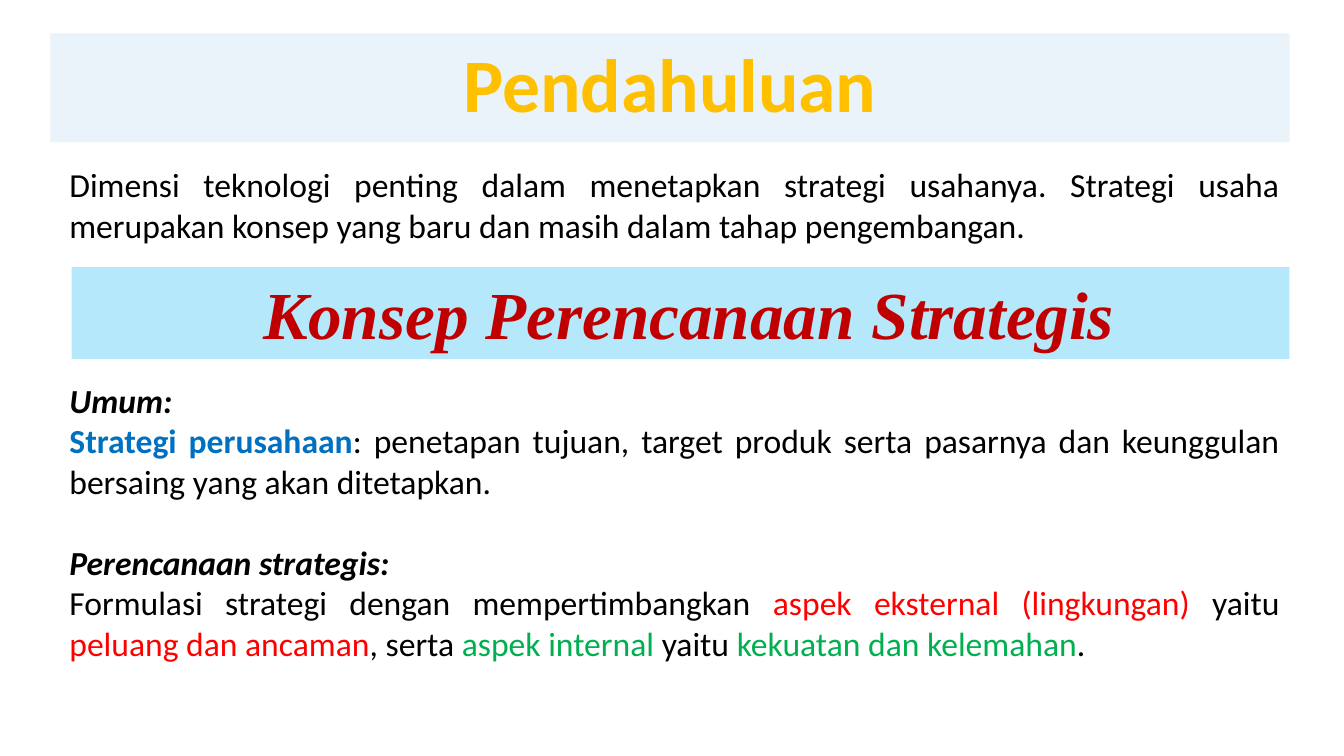
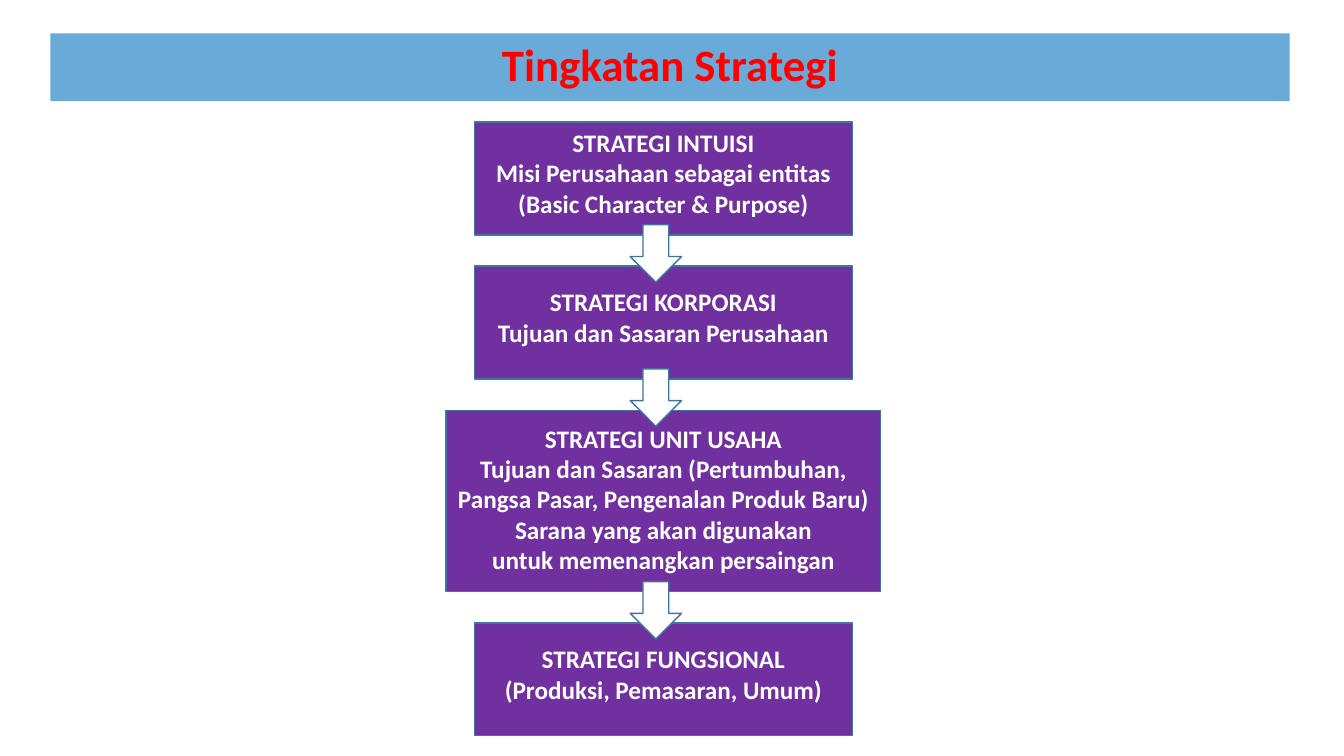
import pptx
import pptx.util
import pptx.dml.color
import pptx.enum.shapes
import pptx.enum.text
import pptx.oxml.ns
import lxml.etree

Inches = pptx.util.Inches
Pt = pptx.util.Pt
SHAPE = pptx.enum.shapes.MSO_SHAPE
ALIGN = pptx.enum.text.PP_ALIGN
MIDDLE = pptx.enum.text.MSO_ANCHOR.MIDDLE

COLORS = {
    "black": "000000", "white": "FFFFFF", "pale": "DEEBF7", "gold": "FFC000",
    "sky": "00B0F0", "blue": "0070C0", "maroon": "C00000", "red": "FF0000",
    "green": "00B050", "purple": "7030A0", "edge": "43739E",
}
LEFT, TOP, WIDTH = 0.5, 0.33, 12.29  # title band
TEXT_LEFT, TEXT_WIDTH = 0.59, 12.2


def color(name):
    return pptx.dml.color.RGBColor.from_string(COLORS[name])


def paint(shape, name, alpha=None):
    """Fill a shape, with an optional opacity in percent."""
    shape.fill.solid()
    shape.fill.fore_color.rgb = color(name)
    if alpha is not None:
        qn = pptx.oxml.ns.qn
        tone = shape.fill._xPr.find(qn("a:solidFill"))[0]
        lxml.etree.SubElement(tone, qn("a:alpha")).set("val", str(alpha * 1000))


def write(para, text, size=24, font="Calibri", tint="black",
          bold=False, italic=False):
    """Add one formatted run to a paragraph."""
    run = para.add_run()
    run.text = text
    run.font.size = Pt(size)
    run.font.name = font
    run.font.color.rgb = color(tint)
    run.font.bold = bold
    run.font.italic = italic


def fill_text(frame, paras, align=ALIGN.CENTER, **style):
    """Write paragraphs; each is a string or a list of (text, style) runs."""
    for i, runs in enumerate(paras):
        para = frame.add_paragraph() if i else frame.paragraphs[0]
        para.alignment = align
        if isinstance(runs, str):
            runs = [(runs, {})]
        for text, extra in runs:
            write(para, text, **{**style, **extra})


def add_title(slide, text, height, band, size, tint):
    title = slide.shapes.title
    title.left, title.top = Inches(LEFT), Inches(TOP)
    title.width, title.height = Inches(WIDTH), Inches(height)
    paint(title, band, 59)
    frame = title.text_frame
    frame.auto_size = pptx.enum.text.MSO_AUTO_SIZE.NONE
    frame.vertical_anchor = MIDDLE
    fill_text(frame, [text], size=size, tint=tint, bold=True)
    frame.paragraphs[0].line_spacing = 0.9


def add_body(slide, top, height, paras):
    box = slide.shapes.add_textbox(Inches(TEXT_LEFT), Inches(top),
                                   Inches(TEXT_WIDTH), Inches(height))
    box.text_frame.word_wrap = True
    fill_text(box.text_frame, paras, align=ALIGN.JUSTIFY)
    return box.text_frame


def add_block(slide, kind, left, top, width, height, fill, alpha=None, edge=None):
    block = slide.shapes.add_shape(kind, Inches(left), Inches(top),
                                   Inches(width), Inches(height))
    block.shadow.inherit = False
    paint(block, fill, alpha)
    if edge:
        block.line.color.rgb = color(edge)
        block.line.width = Pt(1)
    else:
        block.line.fill.background()
    block.text_frame.vertical_anchor = MIDDLE
    return block


def build_intro(slide):
    add_title(slide, "Pendahuluan", 1.08, "pale", 54, "gold")
    add_body(slide, 1.58, 0.91, [
        "Dimensi teknologi penting dalam menetapkan strategi usahanya. "
        "Strategi usaha merupakan konsep yang baru dan masih dalam tahap "
        "pengembangan."])

    # Section band
    band = add_block(slide, SHAPE.RECTANGLE, 0.71, 2.65, 12.08, 0.91, "sky", 29)
    band.text_frame.margin_left = Inches(0.27)
    fill_text(band.text_frame, ["Konsep Perencanaan Strategis"], size=48,
              font="Times New Roman", tint="maroon", bold=True, italic=True)

    # Definitions
    head = {"bold": True, "italic": True}
    red, green = {"tint": "red"}, {"tint": "green"}
    frame = add_body(slide, 3.72, 2.93, [
        [("Umum:", head)],
        [("Strategi perusahaan", {"tint": "blue", "bold": True}),
         (": penetapan tujuan, target produk serta pasarnya dan keunggulan "
          "bersaing yang akan ditetapkan.", {})],
        [("Perencanaan strategis:", head)],
        [("Formulasi strategi dengan mempertimbangkan ", {}),
         ("aspek eksternal (lingkungan)", red), (" yaitu ", {}),
         ("peluang dan ancaman", red), (", serta ", {}),
         ("aspek internal ", green), ("yaitu ", {}),
         ("kekuatan dan kelemahan", green), (".", {})],
    ])
    frame.paragraphs[2].space_before = Pt(29.3)


def build_levels(slide):
    add_title(slide, "Tingkatan Strategi", 0.67, "blue", 32, "red")

    # Level boxes: width, height, bottom inset, lines
    levels = [
        (3.75, 1.12, 0.16, ["STRATEGI INTUISI", "Misi Perusahaan sebagai entitas",
                            "(Basic Character & Purpose)"]),
        (3.75, 1.12, 0.16, ["STRATEGI KORPORASI", "Tujuan dan Sasaran Perusahaan"]),
        (4.31, 1.8, 0.09, ["STRATEGI UNIT USAHA", "Tujuan dan Sasaran (Pertumbuhan,",
                           "Pangsa Pasar, Pengenalan Produk Baru)",
                           "Sarana yang akan digunakan",
                           "untuk memenangkan persaingan"]),
        (3.75, 1.12, 0.16, ["STRATEGI FUNGSIONAL", "(Produksi, Pemasaran, Umum)"]),
    ]
    center, top, gap = 6.58, 1.21, 0.31
    ends = []
    for width, height, inset, lines in levels:
        box = add_block(slide, SHAPE.RECTANGLE, center - width / 2, top,
                        width, height, "purple", edge="edge")
        frame = box.text_frame
        frame.word_wrap = False
        frame.margin_bottom = Inches(inset)
        fill_text(frame, lines, size=18, tint="white", bold=True)
        ends.append(top + height)
        top += height + gap

    # Arrows across the gaps
    for end in ends[:-1]:
        add_block(slide, SHAPE.DOWN_ARROW, 6.25, end - 0.1, 0.51, 0.57,
                  "white", edge="edge")


def main():
    deck = pptx.Presentation()
    deck.slide_width, deck.slide_height = Inches(13.33), Inches(7.5)
    for build in (build_intro, build_levels):
        build(deck.slides.add_slide(deck.slide_layouts[5]))
    deck.save("out.pptx")


if __name__ == "__main__":
    main()
